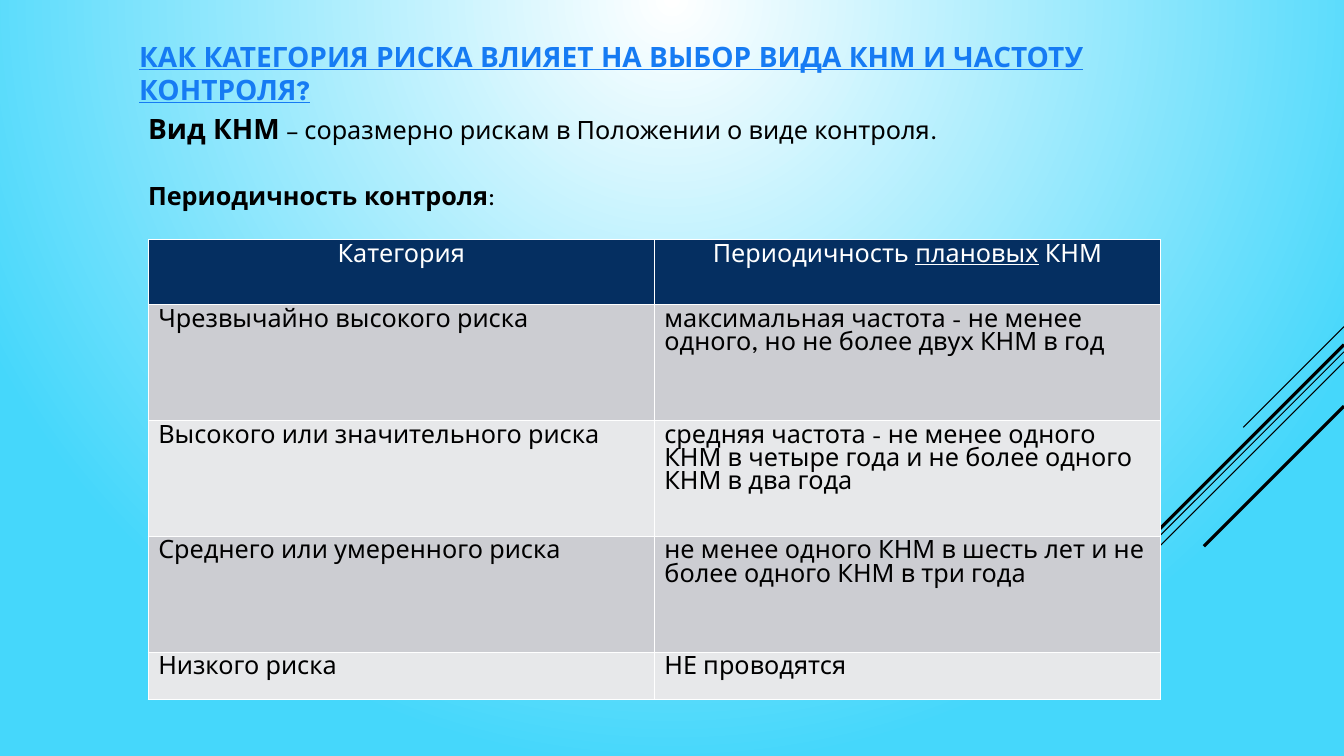
from dataclasses import dataclass

from lxml import etree
from pptx import Presentation
from pptx.dml.color import RGBColor
from pptx.enum.shapes import MSO_CONNECTOR
from pptx.enum.text import MSO_ANCHOR, MSO_AUTO_SIZE, PP_ALIGN
from pptx.oxml.ns import qn
from pptx.util import Inches, Pt

STRAIGHT = MSO_CONNECTOR.STRAIGHT
TOP = MSO_ANCHOR.TOP
NO_AUTOFIT = MSO_AUTO_SIZE.NONE
LEFT = PP_ALIGN.LEFT
CENTER = PP_ALIGN.CENTER
TITLE_ONLY = 5


@dataclass(frozen=True)
class Theme:
    font: str = "League Spartan"
    title: str = "167BF3"
    text: str = "000000"
    white: str = "FFFFFF"
    sky: str = "45D7FB"
    header: str = "052F61"
    bands: tuple = ("CCCDD2", "E7E8EA")
    large: int = 20
    normal: int = 18
    thin: float = 0.75
    thick: float = 2.25
    border: float = 1


THEME = Theme()

TITLE = "КАК КАТЕГОРИЯ РИСКА ВЛИЯЕТ НА ВЫБОР ВИДА КНМ И ЧАСТОТУ КОНТРОЛЯ?"
HEADERS = [
    [("Категория", {})],
    [("Периодичность ", {}), ("плановых", {"underline": True}), (" КНМ", {})],
]
RISKS = [
    ("Чрезвычайно высокого риска",
     "максимальная частота - не менее одного, но не более двух КНМ в год"),
    ("Высокого или значительного риска",
     "средняя частота - не менее одного КНМ в четыре года и не более одного КНМ в два года"),
    ("Среднего или умеренного риска",
     "не менее одного КНМ в шесть лет и не более одного КНМ в три года"),
    ("Низкого риска", "НЕ проводятся"),
]
ROW_HEIGHTS = [0.64, 1.15, 1.15, 1.15, 0.47]
COLUMN_WIDTH = 5.02
RIGHT_EDGE = 13.33
DIAGONALS = [
    (3.24, 1.0, THEME.thin),
    (3.49, 3.26, THEME.thin),
    (3.59, 2.07, THEME.thin),
    (3.42, 1.91, THEME.thick),
    (4.03, 1.39, THEME.thick),
]


def rgb(color):
    return RGBColor.from_string(color)


def set_background(s):
    fill = s.background.fill
    fill.gradient()
    for stop, color, position in zip(fill.gradient_stops, (THEME.white, THEME.sky), (0, 1)):
        stop.color.rgb = rgb(color)
        stop.position = position
    lin = s.element.find(".//" + qn("a:lin"))
    grad = lin.getparent()
    grad.remove(lin)
    circle = etree.SubElement(grad, qn("a:path"), {"path": "circle"})
    etree.SubElement(circle, qn("a:fillToRect"), {"l": "0", "t": "0", "r": "0", "b": "100000"})


def add_diagonal(s, top, length, width):
    line = s.shapes.add_connector(
        STRAIGHT, Inches(RIGHT_EDGE), Inches(top),
        Inches(RIGHT_EDGE - length), Inches(top + length))
    line.line.color.rgb = rgb(THEME.text)
    line.line.width = Pt(width)
    etree.SubElement(line.element.spPr, qn("a:effectLst"))


def add_runs(p, runs, color=THEME.text):
    for text, style in runs:
        r = p.add_run()
        r.text = text
        r.font.name = THEME.font
        r.font.size = Pt(style.get("size", THEME.normal))
        r.font.bold = style.get("bold", False)
        r.font.underline = style.get("underline", False)
        r.font.color.rgb = rgb(color)


def set_title(s):
    sp = s.shapes.title
    sp.left, sp.top, sp.width, sp.height = map(Inches, (1.28, 0.34, 10.88, 0.78))
    tf = sp.text_frame
    tf.auto_size = NO_AUTOFIT
    tf.vertical_anchor = TOP
    p = tf.paragraphs[0]
    p.alignment = LEFT
    add_runs(p, [(TITLE, {"size": THEME.large, "bold": True, "underline": True})], THEME.title)


def add_text(s, left, top, width, height, runs):
    sp = s.shapes.add_textbox(*map(Inches, (left, top, width, height)))
    tf = sp.text_frame
    tf.word_wrap = True
    add_runs(tf.paragraphs[0], runs)


def add_borders(cell):
    tc_pr = cell._tc.get_or_add_tcPr()
    for i, side in enumerate(("a:lnL", "a:lnR", "a:lnT", "a:lnB")):
        ln = etree.Element(qn(side), {"w": str(Pt(THEME.border))})
        fill = etree.SubElement(ln, qn("a:solidFill"))
        etree.SubElement(fill, qn("a:srgbClr"), {"val": THEME.white})
        tc_pr.insert(i, ln)


def fill_cell(cell, runs, fill, color, alignment):
    cell.fill.solid()
    cell.fill.fore_color.rgb = rgb(fill)
    add_borders(cell)
    p = cell.text_frame.paragraphs[0]
    p.alignment = alignment
    add_runs(p, runs, color)


def add_risk_table(s, left, top):
    frame = s.shapes.add_table(
        len(ROW_HEIGHTS), len(HEADERS), Inches(left), Inches(top),
        Inches(COLUMN_WIDTH * len(HEADERS)), Inches(sum(ROW_HEIGHTS)))
    table = frame.table
    table.first_row = table.horz_banding = False
    for column in table.columns:
        column.width = Inches(COLUMN_WIDTH)
    for row, height in zip(table.rows, ROW_HEIGHTS):
        row.height = Inches(height)
    for j, runs in enumerate(HEADERS):
        fill_cell(table.cell(0, j), runs, THEME.header, THEME.white, CENTER)
    for i, risk in enumerate(RISKS):
        band = THEME.bands[i % len(THEME.bands)]
        for j, text in enumerate(risk):
            fill_cell(table.cell(i + 1, j), [(text, {})], band, THEME.text, LEFT)


def main():
    prs = Presentation()
    prs.slide_width, prs.slide_height = Inches(13.33), Inches(7.5)
    s = prs.slides.add_slide(prs.slide_layouts[TITLE_ONLY])
    set_background(s)
    for top, length, width in DIAGONALS:
        add_diagonal(s, top, length, width)
    set_title(s)
    add_text(s, 1.37, 1.06, 10.47, 0.44, [
        ("Вид КНМ ", {"size": THEME.large, "bold": True}),
        ("– соразмерно рискам в Положении о виде контроля.", {}),
    ])
    add_text(s, 1.37, 1.74, 8.54, 0.4, [("Периодичность контроля", {"bold": True}), (":", {})])
    add_risk_table(s, 1.47, 2.38)
    prs.save("out.pptx")


if __name__ == "__main__":
    main()
